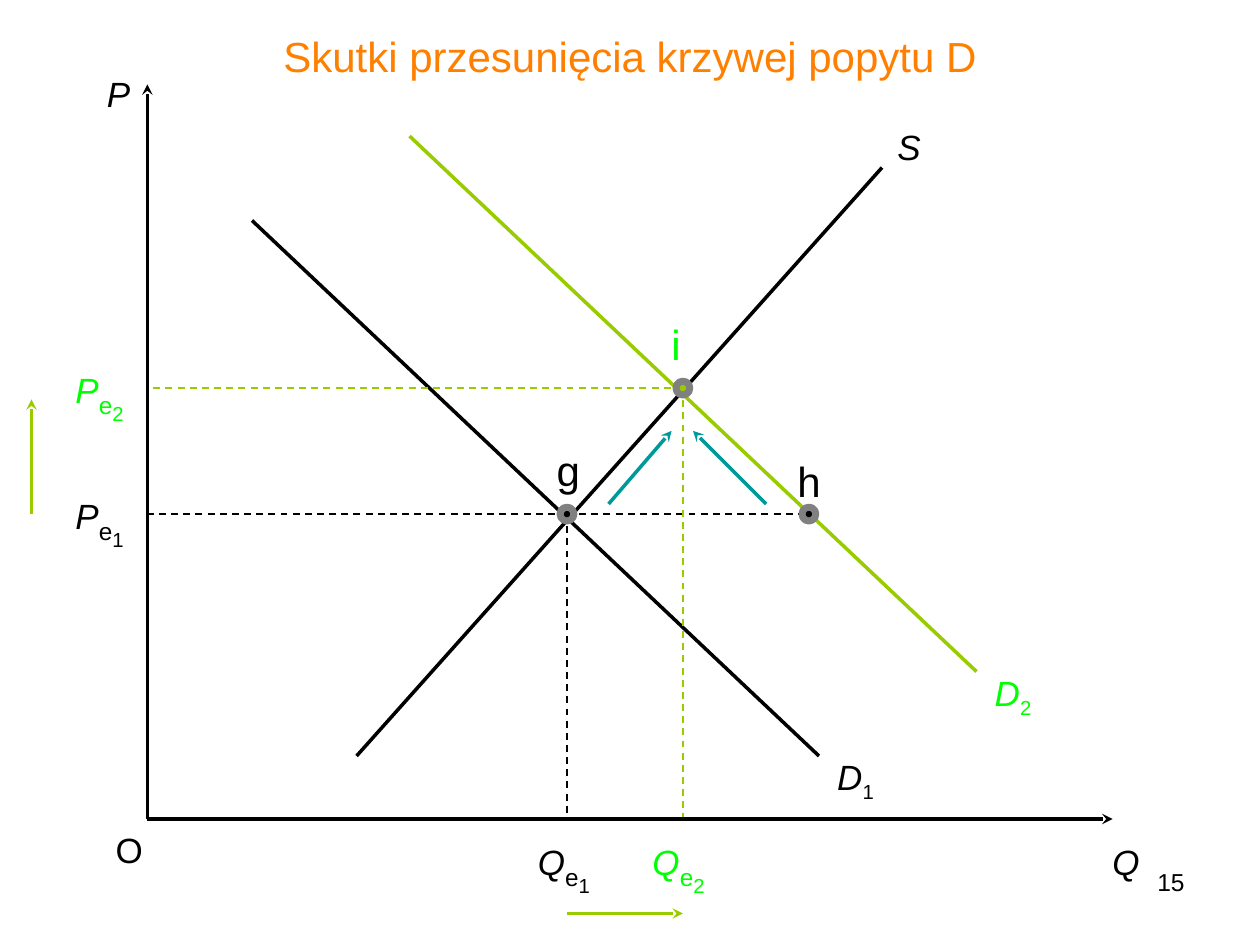
from lxml.etree import SubElement
from pptx import Presentation
from pptx.dml.color import RGBColor
from pptx.enum.dml import MSO_LINE
from pptx.enum.shapes import MSO_CONNECTOR, MSO_SHAPE
from pptx.enum.text import MSO_ANCHOR, PP_ALIGN
from pptx.oxml.ns import qn
from pptx.util import Inches, Pt

COLORS = {
    "black": "000000",
    "demand": "99CC00",
    "label": "00FF00",
    "move": "009999",
    "ring": "808080",
    "title": "FF8000",
}

presentation = Presentation()
presentation.slide_width = Inches(10)
presentation.slide_height = Inches(7.5)
slide = presentation.slides.add_slide(presentation.slide_layouts[6])


def add_line(start, end, color="black", width=2, dashed=False, arrow=False):
    line = slide.shapes.add_connector(
        MSO_CONNECTOR.STRAIGHT, *(Inches(v) for v in (*start, *end)))
    line.line.color.rgb = RGBColor.from_string(COLORS[color])
    line.line.width = Pt(width)
    if dashed:
        line.line.dash_style = MSO_LINE.DASH
    if arrow:
        SubElement(line.line._get_or_add_ln(), qn("a:tailEnd"), type="stealth")
    SubElement(line._element.spPr, qn("a:effectLst"))


def add_label(box, runs, color="black", align=PP_ALIGN.LEFT, wrap=False,
              anchor=MSO_ANCHOR.TOP):
    """Each run is (text, size, italic, baseline in percent)."""
    label = slide.shapes.add_textbox(*(Inches(v) for v in box))
    frame = label.text_frame
    frame.word_wrap = wrap
    frame.vertical_anchor = anchor
    paragraph = frame.paragraphs[0]
    paragraph.alignment = align
    for text, size, italic, baseline in runs:
        run = paragraph.add_run()
        run.text = text
        run.font.name = "Arial"
        run.font.size = Pt(size)
        run.font.italic = italic
        run.font.color.rgb = RGBColor.from_string(COLORS[color])
        if baseline:
            run.font._element.set("baseline", str(baseline * 1000))


# Key positions of the diagram
origin_x, origin_y = 1.17, 6.5
q1, q2, q_h = 4.5, 5.42, 6.42
p1, p2 = 4.08, 3.08

# Axis names
add_label((0.75, 0.53, 0.37, 0.43), [("P", 20, True, 0)], wrap=True)
add_label((8.73, 6.62, 0.42, 0.43), [("Q", 20, True, 0)])
add_label((0.82, 6.53, 0.42, 0.43), [("O", 20, False, 0)])

# Supply and demand curves
add_line((2.83, 6), (7, 1.33))
add_line((2, 1.75), (6.5, 6))
add_line((3.25, 1.08), (7.75, 5.33), "demand")

# Dashed projections of the equilibria
for start, end, color in [
    ((q1, p1), (origin_x, p1), "black"),
    ((q1, p1), (q1, origin_y), "black"),
    ((q1, p1), (q_h, p1), "black"),
    ((q2, p2), (origin_x, p2), "demand"),
    ((q2, p2), (q2, origin_y), "demand"),
]:
    add_line(start, end, color, width=1, dashed=True)

# Axes
add_line((origin_x, origin_y), (8.83, origin_y), arrow=True)
add_line((origin_x, origin_y), (origin_x, 0.67), arrow=True)

# Points g, i and h
diameter = 0.11
for x, y, color in [(q1, p1, "black"), (q2, p2, "demand"), (q_h, p1, "black")]:
    point = slide.shapes.add_shape(
        MSO_SHAPE.OVAL, Inches(x - diameter / 2), Inches(y - diameter / 2),
        Inches(diameter), Inches(diameter))
    point.shadow.inherit = False
    point.fill.solid()
    point.fill.fore_color.rgb = RGBColor.from_string(COLORS[color])
    point.line.color.rgb = RGBColor.from_string(COLORS["ring"])
    point.line.width = Pt(4)

# Equilibrium prices and quantities
for letter, index, x, y, color in [
    ("P", "1", 0.5, 3.82, "black"),
    ("P", "2", 0.5, 2.82, "label"),
    ("Q", "1", 4.17, 6.57, "black"),
    ("Q", "2", 5.08, 6.57, "label"),
]:
    add_label((x, y, 0.75, 0.43),
              [(letter, 20, True, 0), ("e", 24, False, -25),
               (index, 20, False, -50)], color, wrap=True)

# Arrows of change
for start, end, color in [
    ((0.25, p1), (0.25, 3.17), "demand"),
    ((q1, 7.25), (q2, 7.25), "demand"),
    ((4.83, 4), (5.33, 3.42), "move"),
    ((6.08, 4), (5.5, 3.42), "move"),
]:
    add_line(start, end, color, arrow=True)

# Curve names
add_label((7.02, 0.95, 0.39, 0.43), [("S", 20, True, 0)],
          align=PP_ALIGN.CENTER)
for index, x, y, color in [("1", 6.54, 5.95, "black"),
                           ("2", 7.79, 5.28, "label")]:
    add_label((x, y, 0.5, 0.43),
              [("D", 20, True, 0), (index, 20, False, -25)],
              color, PP_ALIGN.CENTER)

# Point names
for letter, x, y, width, color in [
    ("g", 4.32, 3.48, 0.39, "black"),
    ("h", 6.23, 3.57, 0.39, "black"),
    ("i", 5.23, 2.48, 0.28, "label"),
]:
    add_label((x, y, width, 0.5), [(letter, 24, False, 0)], color)

# Title and slide number
add_label((0.75, 0.05, 8.5, 0.78),
          [("Skutki przesunięcia krzywej popytu D", 24, False, 0)],
          "title", PP_ALIGN.CENTER, wrap=True, anchor=MSO_ANCHOR.MIDDLE)
add_label((7.17, 6.83, 2.33, 0.52), [("15", 14, False, 0)],
          align=PP_ALIGN.RIGHT, wrap=True)

presentation.save("out.pptx")
